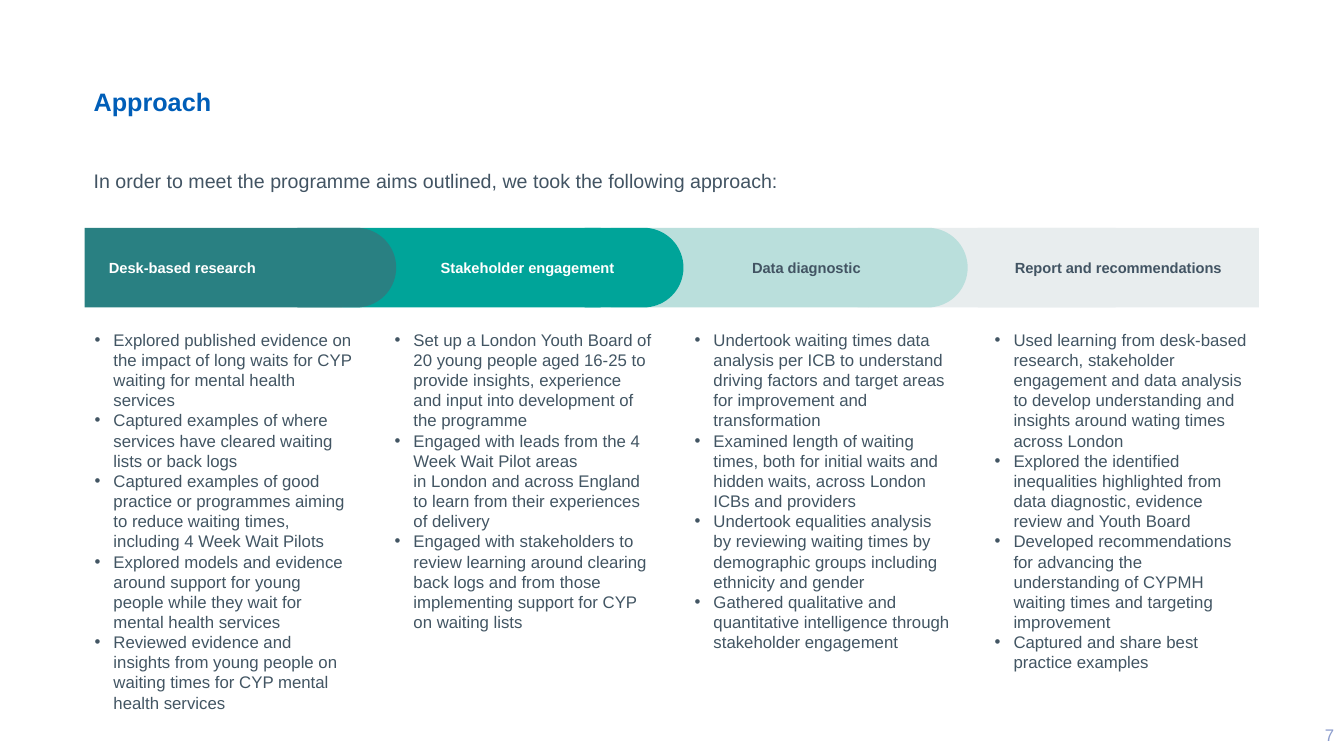
import math

import pptx
import pptx.dml.color
import pptx.enum.shapes
import pptx.enum.text
import pptx.oxml.ns
import pptx.util
from lxml import etree

Pt = pptx.util.Pt
ALIGN = pptx.enum.text.PP_ALIGN
ANCHOR = pptx.enum.text.MSO_ANCHOR

# Content ("~" marks a non-breaking space)
TITLE = "Approach"
INTRO = "In order to meet the programme aims outlined, we took the following approach:"
PAGE = "7"
COLUMNS = [
    ["Explored published evidence on the impact of long waits~for CYP waiting for mental health services",
     "Captured examples of where services have cleared waiting lists or back logs",
     "Captured examples of good practice or programmes aiming to reduce waiting times, "
     "including 4 Week Wait Pilots",
     "Explored models and evidence around support for~young people while they wait~for mental health services",
     "Reviewed evidence and insights from young people on waiting times for CYP mental health services"],
    ["Set up a London Youth Board of 20 young people aged 16-25 to provide insights, experience "
     "and input into development of the~programme",
     "Engaged with leads from the 4 Week Wait Pilot areas in~London and across England "
     "to learn from their experiences of delivery",
     "Engaged with stakeholders to review learning around clearing back logs and from those "
     "implementing support for CYP on waiting lists"],
    ["Undertook waiting times data analysis per ICB to understand driving factors and target areas "
     "for~improvement and transformation",
     "Examined length of waiting times, both for initial waits and hidden waits, across London ICBs~and providers",
     "Undertook equalities analysis by reviewing waiting times by demographic groups~including "
     "ethnicity and gender",
     "Gathered qualitative and quantitative intelligence~through stakeholder engagement"],
    ["Used learning from desk-based research, stakeholder engagement and data analysis to develop "
     "understanding and insights around~wating times across London",
     "Explored the identified inequalities~highlighted from data diagnostic, evidence review and Youth Board",
     "Developed recommendations for advancing the understanding of CYPMH waiting times~and "
     "targeting improvement",
     "Captured and share best practice examples"],
]
# Bars: left, width, fill (back to front)
BARS = [(612.7, 184.3, "E8EDEE"), (60.5, 184.3, "298082"), (244.8, 184.3, "00A499"),
        (436.3, 184.3, "BADFDC"), (698.4, 200.9, "E8EDEE")]
# Rounded ends: left, fill
CAPS = [(212.4, "298082"), (417.6, "00A499"), (620.6, "BADFDC")]
# Labels: text, left, width, colour, alignment
LABELS = [("Desk-based research", 63.4, 198.7, "FFFFFF", ALIGN.LEFT),
          ("Stakeholder engagement", 291.6, 170.6, "FFFFFF", ALIGN.CENTER),
          ("Data diagnostic", 497.5, 157, "425463", ALIGN.CENTER),
          ("Report and recommendations", 698.4, 200.9, "425463", ALIGN.CENTER)]

# Layout
BAND_TOP, BAND_H, CAP_W = 162.7, 56.9, 70.6
COL_LEFT, COL_STEP, COL_TOP, COL_W, COL_H = 60.5, 214.3, 231.8, 198.7, 283.5
INDENT = 13.5

prs = pptx.Presentation()
prs.slide_width, prs.slide_height = Pt(960), Pt(540)
s = prs.slides.add_slide(prs.slide_layouts[6])


def rgb(value):
    return pptx.dml.color.RGBColor.from_string(value)


def paint(sp, colour):
    sp.shadow.inherit = False
    sp.fill.solid()
    sp.fill.fore_color.rgb = rgb(colour)
    sp.line.fill.background()


def add_bullet(p):
    pPr = p._p.get_or_add_pPr()
    pPr.set("marL", str(Pt(INDENT)))
    pPr.set("indent", str(-Pt(INDENT)))
    etree.SubElement(pPr, pptx.oxml.ns.qn("a:buFont"), typeface="Arial")
    etree.SubElement(pPr, pptx.oxml.ns.qn("a:buChar"), char="•")


def add_text(lines, box, size, colour, bold=False, bullets=False, frame={}, para={}):
    tf = s.shapes.add_textbox(*map(Pt, box)).text_frame
    for name, value in {"word_wrap": True, **frame}.items():
        setattr(tf, name, value)
    for i, line in enumerate(lines):
        p = tf.add_paragraph() if i else tf.paragraphs[0]
        if bullets:
            add_bullet(p)
        for name, value in para.items():
            setattr(p, name, value)
        r = p.add_run()
        r.text = line.replace("~", chr(160))
        for name, value in {"name": "Arial", "size": Pt(size), "bold": bold}.items():
            setattr(r.font, name, value)
        r.font.color.rgb = rgb(colour)


# Heading, introduction and page number
add_text([TITLE], (59.8, 60.5, 378, 57.6), 18, "005EB8", bold=True, para={"line_spacing": 0.9})
add_text([INTRO], (59.8, 118.8, 840.2, 25.2), 14, "425463", para={"line_spacing": 0.9})
add_text([PAGE], (890, 510.5, 70, 28.8), 12, "8C9DCD",
         frame={"vertical_anchor": ANCHOR.MIDDLE}, para={"alignment": ALIGN.RIGHT})

# Process band
for left, width, colour in BARS:
    sp = s.shapes.add_shape(pptx.enum.shapes.MSO_SHAPE.RECTANGLE,
                            Pt(left), Pt(BAND_TOP), Pt(width), Pt(BAND_H))
    paint(sp, colour)

radius = BAND_H / 2
for left, colour in CAPS:
    cx, cy = left + CAP_W - radius, BAND_TOP + radius
    arc = [(cx + radius * math.cos(math.radians(a)), cy + radius * math.sin(math.radians(a)))
           for a in range(-90, 91, 5)]
    fb = s.shapes.build_freeform(Pt(left), Pt(BAND_TOP))
    fb.add_line_segments([(Pt(x), Pt(y)) for x, y in arc + [(left, BAND_TOP + BAND_H)]], close=True)
    paint(fb.convert_to_shape(), colour)

for text, left, width, colour, align in LABELS:
    add_text([text], (left, BAND_TOP, width, BAND_H), 10.5, colour, bold=True,
             frame={"vertical_anchor": ANCHOR.MIDDLE, "margin_left": Pt(14.4), "margin_right": Pt(14.4)},
             para={"alignment": align})

# Bulleted columns
for i, lines in enumerate(COLUMNS):
    add_text(lines, (COL_LEFT + i * COL_STEP, COL_TOP, COL_W, COL_H), 12, "425563", bullets=True)

prs.save("out.pptx")
